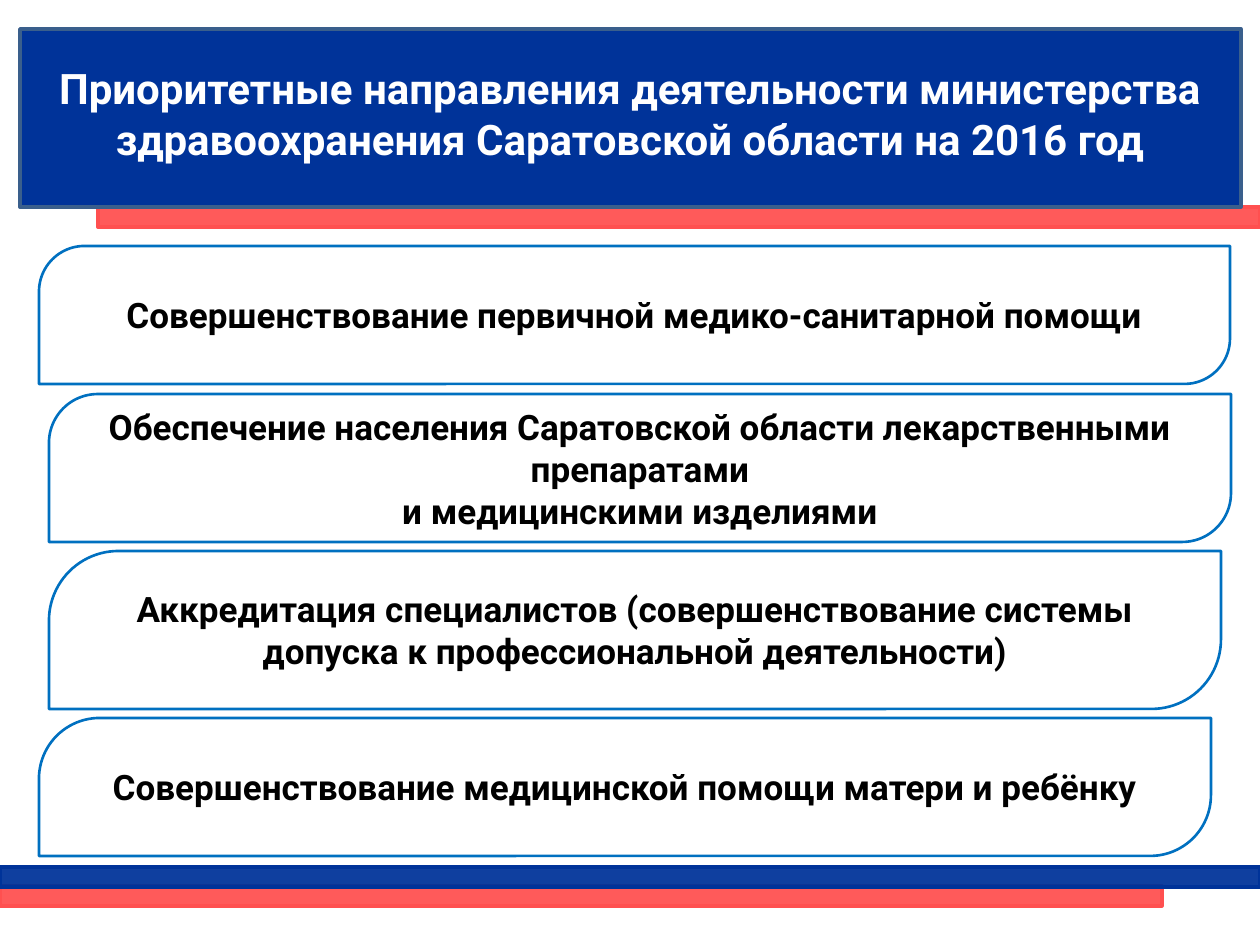
import pptx
import pptx.dml.color
import pptx.enum.shapes
import pptx.enum.text
import pptx.oxml.ns
import pptx.util
from lxml import etree

EMU_PER_PX = 914400 / 126
SHAPES = pptx.enum.shapes.MSO_SHAPE
BLUE, RED, WHITE, BLACK = "003399", "FF5050", "FFFFFF", "000000"


def px(length):
    return pptx.util.Emu(round(length * EMU_PER_PX))


def color(hex_value):
    return pptx.dml.color.RGBColor.from_string(hex_value)


class SlideBuilder:
    font_name = "Roboto"
    card_line = "0070C0"
    bar_opacity = 94

    def __init__(self, slide):
        self.slide = slide

    def shape(self, kind, box, fill, line, line_width):
        shape = self.slide.shapes.add_shape(kind, *map(px, box))
        shape.shadow.inherit = False
        shape.fill.solid()
        shape.fill.fore_color.rgb = color(fill)
        shape.line.color.rgb = color(line)
        shape.line.width = pptx.util.Pt(line_width)
        return shape

    def bar(self, box, fill):
        """Add a slightly transparent decorative strip."""
        shape = self.shape(SHAPES.RECTANGLE, box, fill, fill, 2)
        properties = shape.element.spPr
        solid_fill = properties.find(pptx.oxml.ns.qn("a:solidFill"))
        alpha = etree.SubElement(solid_fill[0], pptx.oxml.ns.qn("a:alpha"))
        alpha.set("val", str(self.bar_opacity * 1000))

    def banner(self, box):
        self.shape(SHAPES.RECTANGLE, box, BLUE, "3A5F8C", 2)

    def card(self, box, rounding, lines):
        """Add a box with two opposite corners rounded."""
        shape = self.shape(SHAPES.ROUND_2_DIAG_RECTANGLE, box, WHITE,
                           self.card_line, 1.5)
        shape.adjustments[0] = rounding
        shape.adjustments[1] = 0
        self.add_lines(shape.text_frame, lines, 20, BLACK)

    def title(self, box, text):
        text_box = self.slide.shapes.add_textbox(*map(px, box))
        self.add_lines(text_box.text_frame, [text], 24, WHITE)

    def add_lines(self, frame, lines, size, text_color):
        frame.word_wrap = True
        frame.vertical_anchor = pptx.enum.text.MSO_ANCHOR.MIDDLE
        for index, line in enumerate(lines):
            paragraph = frame.add_paragraph() if index else frame.paragraphs[0]
            paragraph.alignment = pptx.enum.text.PP_ALIGN.CENTER
            run = paragraph.add_run()
            run.text = line
            run.font.name = self.font_name
            run.font.size = pptx.util.Pt(size)
            run.font.bold = True
            run.font.color.rgb = color(text_color)


def main():
    presentation = pptx.Presentation()
    presentation.slide_width = px(1260)
    presentation.slide_height = px(945)
    builder = SlideBuilder(
        presentation.slides.add_slide(presentation.slide_layouts[6]))

    builder.bar((98, 207, 1162, 20), RED)
    builder.banner((20, 29, 1221, 178))
    builder.title((10, 39, 1240, 148),
                  "Приоритетные направления деятельности министерства "
                  "здравоохранения Саратовской области на 2016 год")

    cards = [
        ((39, 246, 1191, 138), 0.33,
         ["Совершенствование первичной медико-санитарной помощи"]),
        ((49, 394, 1182, 148), 0.33,
         ["Обеспечение населения Саратовской области лекарственными "
          "препаратами", "и медицинскими изделиями"]),
        ((49, 551, 1172, 158), 0.44,
         ["Аккредитация специалистов (совершенствование системы допуска "
          "к профессиональной деятельности)"]),
        ((39, 718, 1172, 138), 0.44,
         ["Совершенствование медицинской помощи матери и ребёнку"]),
    ]
    for box, rounding, lines in cards:
        builder.card(box, rounding, lines)

    builder.bar((0, 886, 1162, 20), RED)
    builder.bar((0, 867, 1260, 20), BLUE)
    presentation.save("out.pptx")


if __name__ == "__main__":
    main()
